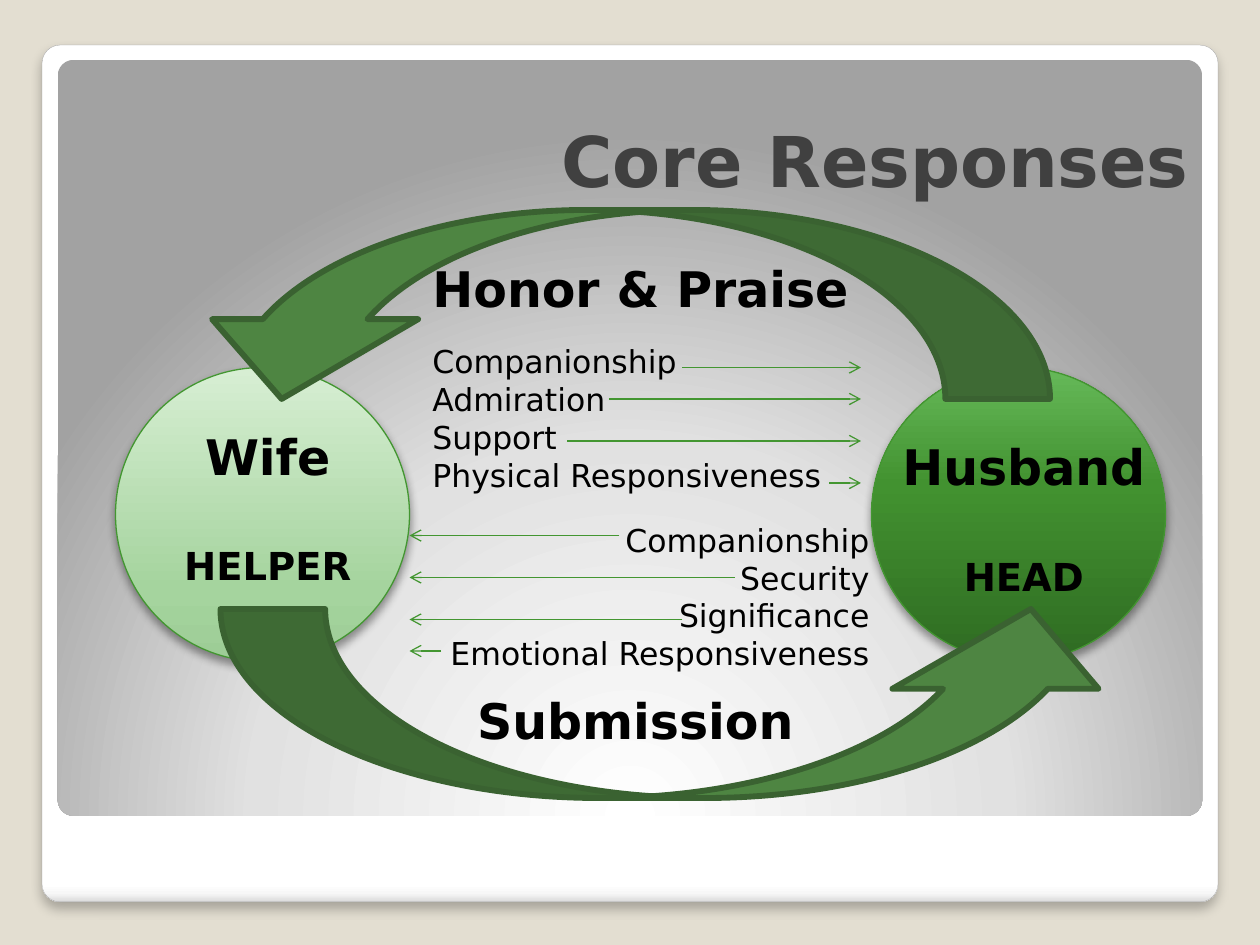
from lxml import etree
from pptx import Presentation
from pptx.dml.color import RGBColor
from pptx.enum.shapes import MSO_CONNECTOR, MSO_SHAPE
from pptx.enum.text import MSO_ANCHOR, PP_ALIGN
from pptx.oxml.ns import qn
from pptx.util import Inches, Pt

LEFT, CENTER, RIGHT = PP_ALIGN.LEFT, PP_ALIGN.CENTER, PP_ALIGN.RIGHT
STRAIGHT = MSO_CONNECTOR.STRAIGHT
ROUNDED, OVAL = MSO_SHAPE.ROUNDED_RECTANGLE, MSO_SHAPE.OVAL
CURVED_ARROW = MSO_SHAPE.CURVED_RIGHT_ARROW

COLUMNS, ROWS = 120, 90  # grid of twelve units to the inch
FONT = "DejaVu Sans"
GREEN = "439631"


def units(count):
    return Inches(count / 12)


def color(value):
    return RGBColor.from_string(value)


def child(parent, tag, **attributes):
    values = {name: str(value) for name, value in attributes.items()}
    return etree.SubElement(parent, qn(tag), values)


def set_gradient(shape, stops, angle=None, focus=None):
    """Fill with (percent, colour) stops, along an angle or around a focus."""
    shape.fill.background()
    plain = shape._element.spPr.find(qn("a:noFill"))
    gradient = etree.Element(qn("a:gradFill"), rotWithShape="1")
    stop_list = child(gradient, "a:gsLst")
    for percent, value in stops:
        stop = child(stop_list, "a:gs", pos=percent * 1000)
        child(stop, "a:srgbClr", val=value)
    if focus:
        ring = child(gradient, "a:path", path="circle")
        sides = {side: share * 1000 for side, share in zip("ltrb", focus)}
        child(ring, "a:fillToRect", **sides)
    else:
        child(gradient, "a:lin", ang=angle * 60000, scaled=0)
    plain.getparent().replace(plain, gradient)


def set_shadow(shape, opacity, blur, distance):
    effects = shape._element.spPr.find(qn("a:effectLst"))
    shadow = child(effects, "a:outerShdw", blurRad=Pt(blur), dist=Pt(distance),
                   dir=90 * 60000, algn="ctr", rotWithShape=0)
    tone = child(shadow, "a:srgbClr", val="000000")
    child(tone, "a:alpha", val=opacity * 1000)


def add_shape(page, kind, box, line=None, width=0.75, adjust=()):
    shape = page.shapes.add_shape(kind, *map(units, box))
    shape.shadow.inherit = False
    for index, value in enumerate(adjust):
        shape.adjustments[index] = value
    if line:
        shape.line.color.rgb = color(line)
        shape.line.width = Pt(width)
    else:
        shape.line.fill.background()
    return shape


def write(para, text, size=18, bold=False, fill="000000", align=LEFT, before=0):
    para.alignment = align
    para.space_before = Pt(before)
    span = para.add_run()
    span.text = text
    span.font.name = FONT
    span.font.size = Pt(size)
    span.font.bold = bold
    span.font.color.rgb = color(fill)


def add_text(page, box, lines, **style):
    """Lines are strings, or (string, own format) pairs."""
    frame = page.shapes.add_textbox(*map(units, box)).text_frame
    frame.word_wrap = True
    for index, line in enumerate(lines):
        text, own = line if isinstance(line, tuple) else (line, {})
        para = frame.add_paragraph() if index else frame.paragraphs[0]
        write(para, text, **{**style, **own})


def add_arrow(page, start, end, row):
    arrow = page.shapes.add_connector(
        STRAIGHT, units(start), units(row), units(end), units(row))
    arrow.line.color.rgb = color(GREEN)
    arrow.line.width = Pt(0.75)
    child(arrow.line._get_or_add_ln(), "a:tailEnd", type="arrow")
    child(arrow._element.spPr, "a:effectLst")


def draw_backdrop(page):
    page.background.fill.solid()
    page.background.fill.fore_color.rgb = color("E3DED1")
    card = add_shape(page, ROUNDED, (4, 4.3, 112, 81.6), "A4A4A4", 0.16, [0.021])
    set_gradient(card, [(0, "FFFFFF"), (98, "FFFFFF"), (99, "F7F7F7"),
                        (100, "DADADA")], angle=90)
    set_shadow(card, 25, 6, 4)
    panel = add_shape(page, ROUNDED, (5.5, 5.7, 109, 72), adjust=[0.021])
    set_gradient(panel, [(0, "FFFFFF"), (55, "E1E1E1"), (100, "A2A2A2")],
                 focus=(50, 175, 50, -75))


def draw_title(page, box, text):
    title = page.shapes.title
    title.left, title.top, title.width, title.height = map(units, box)
    title.text_frame.vertical_anchor = MSO_ANCHOR.BOTTOM
    write(title.text_frame.paragraphs[0], text, size=40, bold=True,
          fill="404040", align=RIGHT)
    page.shapes._spTree.append(title._element)  # in front of the backdrop


def draw_spouse(page, box, stops):
    circle = add_shape(page, OVAL, box, GREEN)
    set_gradient(circle, stops, angle=270)
    set_shadow(circle, 40, 5.2, 3)


def draw_role(page, box, name, role):
    add_text(page, box, [name, (role, {"size": 22, "before": 32.6})],
             size=28, bold=True, align=CENTER)


def draw_sweep(page, box, rotation):
    """Curved arrow turned on its side so that it spans the given box."""
    left, top, width, height = box
    shift = (width - height) / 2
    sweep = add_shape(page, CURVED_ARROW,
                      (left + shift, top - shift, height, width),
                      "3A6231", 3.35, [0.554, 1.091, 0.422])
    sweep.rotation = rotation
    sweep.fill.solid()
    sweep.fill.fore_color.rgb = color("4E8542")


def draw_responses(page, box, align, target, responses):
    """Responses are (text, arrow start, arrow row)."""
    add_text(page, box, [text for text, _, _ in responses], align=align)
    for _, start, row in responses:
        add_arrow(page, start, target, row)


def main():
    deck = Presentation()
    deck.slide_width, deck.slide_height = units(COLUMNS), units(ROWS)
    page = deck.slides.add_slide(deck.slide_layouts[5])

    draw_backdrop(page)
    draw_title(page, (7, 6, 107.4, 13.8), "Core Responses")

    # Wife and husband
    draw_spouse(page, (11, 35, 28, 28),
                [(0, "9DCD96"), (25, "A5D49E"), (100, "D7EED3")])
    draw_spouse(page, (83, 35, 28, 28),
                [(0, "2F6B22"), (60, "429230"), (100, "66B959")])
    draw_role(page, (14, 40, 23, 17), "Wife", "HELPER")
    draw_role(page, (84, 41, 27, 17), "Husband", "HEAD")

    # Cycle between them
    draw_sweep(page, (17, 20, 83, 18), 90)
    draw_sweep(page, (21, 58, 87, 18), 270)
    heading = {"size": 28, "bold": True, "align": CENTER}
    add_text(page, (37, 24, 48, 6.8), ["Honor & Praise"], **heading)
    add_text(page, (30, 65.2, 61, 6.8), ["Submission"], **heading)

    # What each gives the other
    draw_responses(page, (40, 32, 43, 15.7), LEFT, 82, [
        ("Companionship", 65, 35),
        ("Admiration", 58, 38),
        ("Support", 54, 42),
        ("Physical Responsiveness", 79, 46),
    ])
    draw_responses(page, (41, 49, 43, 15.7), RIGHT, 39, [
        ("Companionship", 59, 51),
        ("Security", 70, 55),
        ("Significance", 65, 59),
        ("Emotional Responsiveness", 42, 62),
    ])
    deck.save("out.pptx")


if __name__ == "__main__":
    main()
